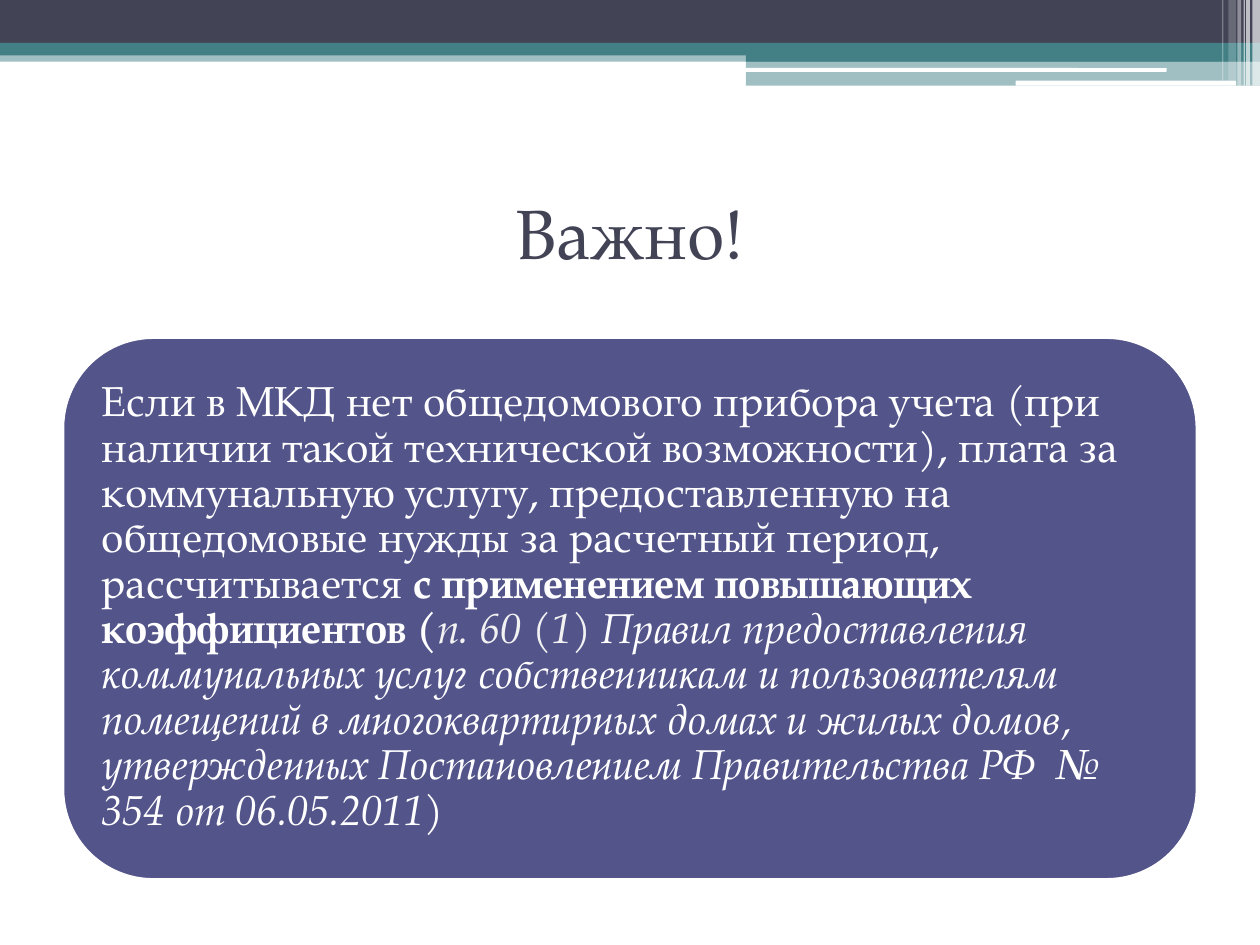
from lxml.etree import SubElement
from pptx import Presentation
from pptx.dml.color import RGBColor
from pptx.enum.shapes import MSO_SHAPE
from pptx.enum.text import MSO_ANCHOR, PP_ALIGN
from pptx.oxml.ns import qn
from pptx.util import Inches, Pt

FONT = "TeX Gyre Pagella"
DARK, TEAL, WHITE, VIOLET, PALE = "424456", "438086", "FFFFFF", "53548A", "F2F2F2"
MARGIN, CONTENT_WIDTH = 0.5, 9

# Header bands: left, top, width, height, colour, opacity in percent
BANDS = [
    (0, 0.4, 10, 0.09, TEAL, 50),
    (0, 0, 10, 0.34, DARK, 100),
    (0, 0.34, 10, 0.1, TEAL, 100),
    (5.92, 0.39, 4.08, 0.1, TEAL, 100),
    (5.92, 0.48, 4.08, 0.2, TEAL, 50),
]
# White rules across the header: left, top, width, height
RULES = [(5.91, 0.54, 3.35, 0.03), (8.06, 0.64, 1.75, 0.04)]
# Translucent stripes at the right edge: left, width, height, opacity
STRIPES = [
    (9.94, 0.06, 0.68, 65),
    (9.89, 0.03, 0.68, 65),
    (9.87, 0.01, 0.68, 60),
    (9.82, 0.03, 0.68, 40),
    (9.75, 0.06, 0.64, 20),
    (9.7, 0.01, 0.64, 30),
]
# Statement: text, bold, italic, colour
STATEMENT = [
    ("Если в МКД нет общедомового прибора учета (при наличии такой технической "
     "возможности), плата за коммунальную услугу, предоставленную на общедомовые "
     "нужды за расчетный период, рассчитывается ", False, False, WHITE),
    ("с применением повышающих коэффициентов ", True, False, WHITE),
    ("(", True, True, WHITE),
    ("п. 60 (1) ", False, True, PALE),
    ("Правил предоставления коммунальных услуг собственникам и пользователям "
     "помещений в многоквартирных домах и жилых домов, утвержденных "
     "Постановлением Правительства РФ  № 354 от 06.05.2011)", False, True, WHITE),
]


def color(value):
    return RGBColor.from_string(value)


def place(left, top, width, height):
    return [Inches(length) for length in (left, top, width, height)]


def add_block(page, area, fill, opacity=100, kind=MSO_SHAPE.RECTANGLE):
    """Add a filled shape without outline or shadow."""
    block = page.shapes.add_shape(kind, *place(*area))
    block.shadow.inherit = False
    block.fill.solid()
    block.fill.fore_color.rgb = color(fill)
    block.line.fill.background()
    if opacity < 100:
        tint = block.fill._xPr.find(qn("a:solidFill"))[0]
        SubElement(tint, qn("a:alpha"), val=str(opacity * 1000))
    return block


def format_span(span, size, value, bold=False, italic=False):
    font = span.font
    font.name, font.size = FONT, Pt(size)
    font.bold, font.italic = bold, italic
    font.color.rgb = color(value)


def add_header(page):
    for *area, fill, opacity in BANDS:
        add_block(page, area, fill, opacity)
    for area in RULES:
        add_block(page, area, WHITE, kind=MSO_SHAPE.ROUNDED_RECTANGLE)
    for left, width, height, opacity in STRIPES:
        add_block(page, (left, 0, width, height), WHITE, opacity)


def set_title(page, text):
    title = page.shapes.title
    title.left, title.top, title.width, title.height = place(
        MARGIN, 1.25, CONTENT_WIDTH, 1.17)
    frame = title.text_frame
    frame.text = text
    frame.vertical_anchor = MSO_ANCHOR.MIDDLE
    para = frame.paragraphs[0]
    para.alignment = PP_ALIGN.CENTER
    format_span(para.runs[0], 40, DARK)


def add_statement(page):
    # Rounded panel
    panel = add_block(page, (MARGIN, 2.68, CONTENT_WIDTH, 4.3), VIOLET,
                      kind=MSO_SHAPE.ROUNDED_RECTANGLE)
    panel.line.color.rgb = color(WHITE)
    panel.line.width = Pt(1.5)

    # Text inside the panel's corners
    box = page.shapes.add_textbox(*place(0.71, 2.88, 8.58, 3.88))
    frame = box.text_frame
    frame.word_wrap = True
    frame.vertical_anchor = MSO_ANCHOR.MIDDLE
    frame.margin_left = frame.margin_right = Inches(0.1)
    frame.margin_top = frame.margin_bottom = Inches(0.1)
    para = frame.paragraphs[0]
    para.line_spacing = 0.9
    for text, bold, italic, value in STATEMENT:
        span = para.add_run()
        span.text = text
        format_span(span, 24, value, bold, italic)


def main():
    deck = Presentation()
    deck.slide_width, deck.slide_height = Inches(10), Inches(7.5)
    page = deck.slides.add_slide(deck.slide_layouts[5])
    add_header(page)
    set_title(page, "Важно!")
    add_statement(page)
    deck.save("out.pptx")


if __name__ == "__main__":
    main()
